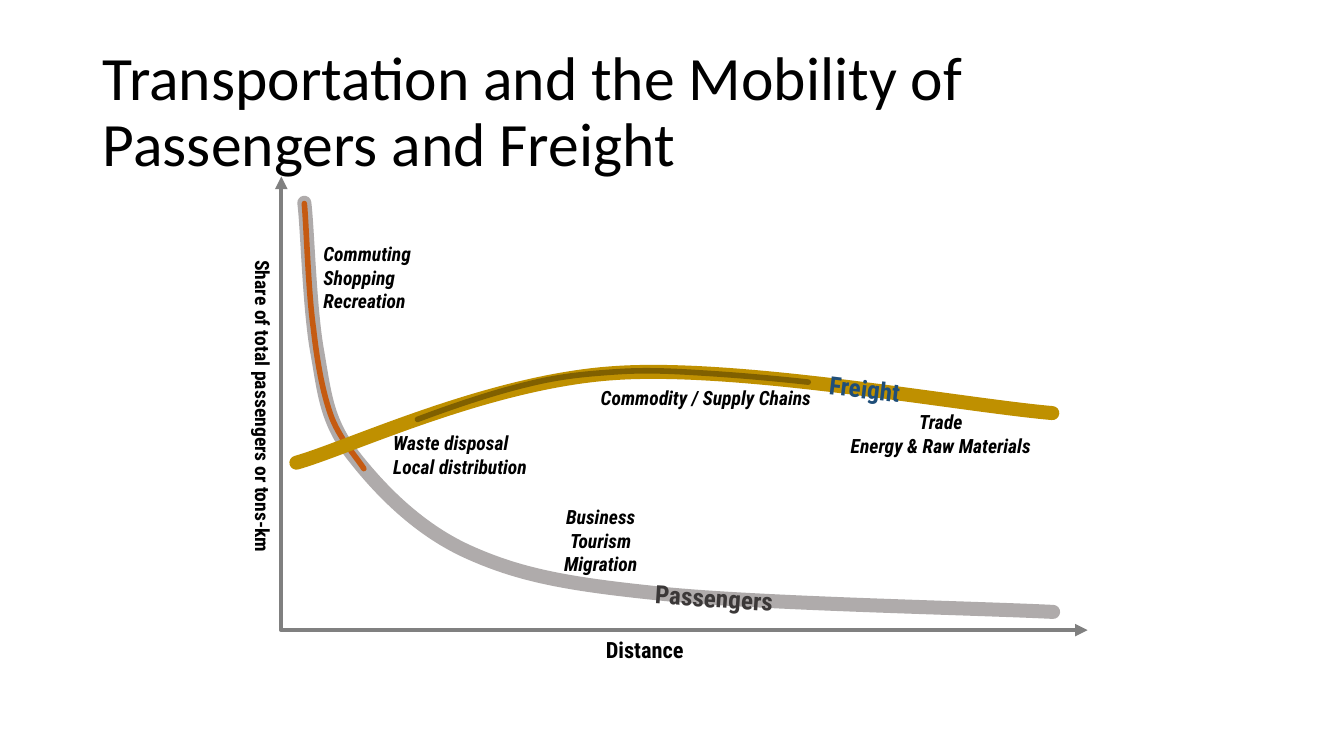
import copy
import dataclasses

import lxml.etree
import pptx
import pptx.dml.color
import pptx.enum.text
import pptx.oxml.ns
import pptx.util

Cm, Pt = pptx.util.Cm, pptx.util.Pt
Anchor = pptx.enum.text.MSO_ANCHOR
Align = pptx.enum.text.PP_ALIGN
AutoSize = pptx.enum.text.MSO_AUTO_SIZE
qn = pptx.oxml.ns.qn


@dataclasses.dataclass(frozen=True)
class Theme:
    title_font: str = "Calibri"
    label_font: str = "Roboto Condensed"
    title_size: int = 44
    curve_size: int = 18
    axis_size: int = 16
    label_size: int = 14
    axis_width: int = 3
    curve_width: int = 10
    range_width: int = 4
    text: str = "000000"
    axis: str = "808080"
    passengers: str = "AFABAB"
    passengers_text: str = "3B3838"
    passengers_range: str = "C55A11"
    freight: str = "BF9000"
    freight_text: str = "1F4E79"
    freight_range: str = "806000"


def apply(target, values):
    for name, value in values.items():
        setattr(target, name, value)


def rgb(color):
    return pptx.dml.color.RGBColor.from_string(color)


class SlideWriter:
    def __init__(self, page, theme):
        self.page = page
        self.theme = theme

    def style_text(self, para, font, size, color, **options):
        for span in para.runs:
            apply(span.font, {"name": font, "size": Pt(size), **options})
            span.font.color.rgb = rgb(color)
        # Line breaks take the height of the text around them
        for line_break in para._p.findall(qn("a:br")):
            line_break.insert(0, copy.deepcopy(para.runs[0]._r.rPr))

    def title(self, text, left, top, width, height):
        box = self.page.shapes.title
        apply(box, {"left": Cm(left), "top": Cm(top),
                    "width": Cm(width), "height": Cm(height)})
        frame = box.text_frame
        frame.text = text
        apply(frame, {"word_wrap": True, "auto_size": AutoSize.NONE,
                      "vertical_anchor": Anchor.MIDDLE})
        para = frame.paragraphs[0]
        apply(para, {"alignment": Align.LEFT, "line_spacing": 0.9})
        self.style_text(para, self.theme.title_font,
                        self.theme.title_size, self.theme.text)

    def label(self, lines, left, top, width, height, size=None, color=None,
              italic=False, rotation=0, alignment=Align.LEFT):
        box = self.page.shapes.add_textbox(Cm(left), Cm(top), Cm(width), Cm(height))
        box.rotation = rotation
        frame = box.text_frame
        apply(frame, {"word_wrap": False, "auto_size": AutoSize.SHAPE_TO_FIT_TEXT,
                      "margin_left": 0, "margin_right": 0,
                      "margin_top": 0, "margin_bottom": 0})
        for index, line in enumerate(lines):
            para = frame.add_paragraph() if index else frame.paragraphs[0]
            para.text = line
            para.alignment = alignment
            self.style_text(para, self.theme.label_font,
                            size or self.theme.label_size,
                            color or self.theme.text, bold=True, italic=italic)

    def activity(self, lines, *place, alignment=Align.LEFT):
        self.label(lines, *place, italic=True, alignment=alignment)

    def outline(self, points, color, width):
        points = [(Cm(x), Cm(y)) for x, y in points]
        builder = self.page.shapes.build_freeform(*points[0])
        builder.add_line_segments(points[1:], close=False)
        shape = builder.convert_to_shape()
        shape.shadow.inherit = False
        shape.fill.background()
        shape.line.color.rgb = rgb(color)
        shape.line.width = Pt(width)
        return shape

    def axes(self, points):
        shape = self.outline(points, self.theme.axis, self.theme.axis_width)
        stroke = shape.line._get_or_add_ln()
        for end in ("a:headEnd", "a:tailEnd"):
            lxml.etree.SubElement(stroke, qn(end), type="triangle")

    def curve(self, points, color, width):
        shape = self.outline(points, color, width)
        shape.line._get_or_add_ln().set("cap", "rnd")
        # Every three points after the start make one Bézier segment
        contour = shape._element.find(".//" + qn("a:path"))
        segments = contour.findall(qn("a:lnTo"))
        for start in range(0, len(segments), 3):
            bezier = lxml.etree.SubElement(contour, qn("a:cubicBezTo"))
            for segment in segments[start:start + 3]:
                bezier.append(segment[0])
                contour.remove(segment)


# Curves: a start point, then two control points and an end point per segment
PASSENGERS = [
    (7.67, 5.11), (7.75, 5.74), (7.8, 7.82), (8, 8.89),
    (8.18, 9.93), (8.23, 10.57), (8.84, 11.4),
    (9.47, 12.22), (10.44, 13.28), (11.76, 13.89),
    (13.06, 14.48), (14.2, 14.71), (16.66, 14.96),
    (19.13, 15.21), (24.49, 15.32), (26.54, 15.42)]
DAILY_TRIPS = [
    (7.67, 5.13), (7.72, 5.64), (7.77, 7.39), (7.9, 8.28),
    (8, 9.17), (8.13, 9.86), (8.33, 10.44),
    (8.53, 11.02), (8.99, 11.53), (9.17, 11.81)]
FREIGHT = [
    (7.47, 11.66), (8.81, 11.28), (12.34, 9.6), (15.52, 9.4),
    (18.69, 9.19), (24.23, 10.21), (26.52, 10.41)]
SUPPLY_CHAINS = [
    (10.52, 10.57), (11.48, 10.21), (12.47, 9.88), (13.31, 9.68),
    (14.15, 9.47), (14.81, 9.42), (15.54, 9.37),
    (16.26, 9.32), (16.92, 9.35), (17.7, 9.4),
    (18.52, 9.45), (19.46, 9.53), (20.37, 9.63)]


def main():
    deck = pptx.Presentation()
    apply(deck, {"slide_width": Cm(33.87), "slide_height": Cm(19.05)})
    theme = Theme()
    writer = SlideWriter(deck.slides.add_slide(deck.slide_layouts[5]), theme)

    writer.title("Transportation and the Mobility of Passengers and Freight",
                 2.34, 1.02, 29.21, 3.68)

    # Axes and passenger curve
    writer.axes([(7.09, 4.45), (7.09, 15.88), (27.41, 15.88)])
    writer.curve(PASSENGERS, theme.passengers, theme.curve_width)
    writer.label(["Share of total passengers or tons-km"],
                 2.74, 10.13, 7.75, 0.61, rotation=90)
    writer.label(["Distance"], 15.27, 16.03, 2.08, 0.69, size=theme.axis_size)
    writer.label(["Passengers"], 16.51, 14.68, 3, 0.76, size=theme.curve_size,
                 color=theme.passengers_text, rotation=3.7)
    writer.curve(DAILY_TRIPS, theme.passengers_range, theme.range_width)

    # Freight curve and activities
    writer.curve(FREIGHT, theme.freight, theme.curve_width)
    writer.activity(["Commuting", "Shopping", "Recreation"], 8.15, 6.1, 2.44, 1.8)
    writer.activity(["Business", "Tourism\nMigration"], 14.1, 12.73, 2.08, 1.8,
                    alignment=Align.CENTER)
    writer.activity(["Waste disposal", "Local distribution"],
                    9.91, 10.87, 3.66, 1.19)
    writer.curve(SUPPLY_CHAINS, theme.freight_range, theme.range_width)
    writer.activity(["Trade", "Energy & Raw Materials"], 21.13, 10.34, 5.16, 1.19,
                    alignment=Align.CENTER)
    writer.activity(["Commodity / Supply Chains"], 15.14, 9.73, 5.74, 0.61)
    writer.label(["Freight"], 20.9, 9.42, 2.01, 0.76, size=theme.curve_size,
                 color=theme.freight_text, rotation=6.8)

    deck.save("out.pptx")


if __name__ == "__main__":
    main()
